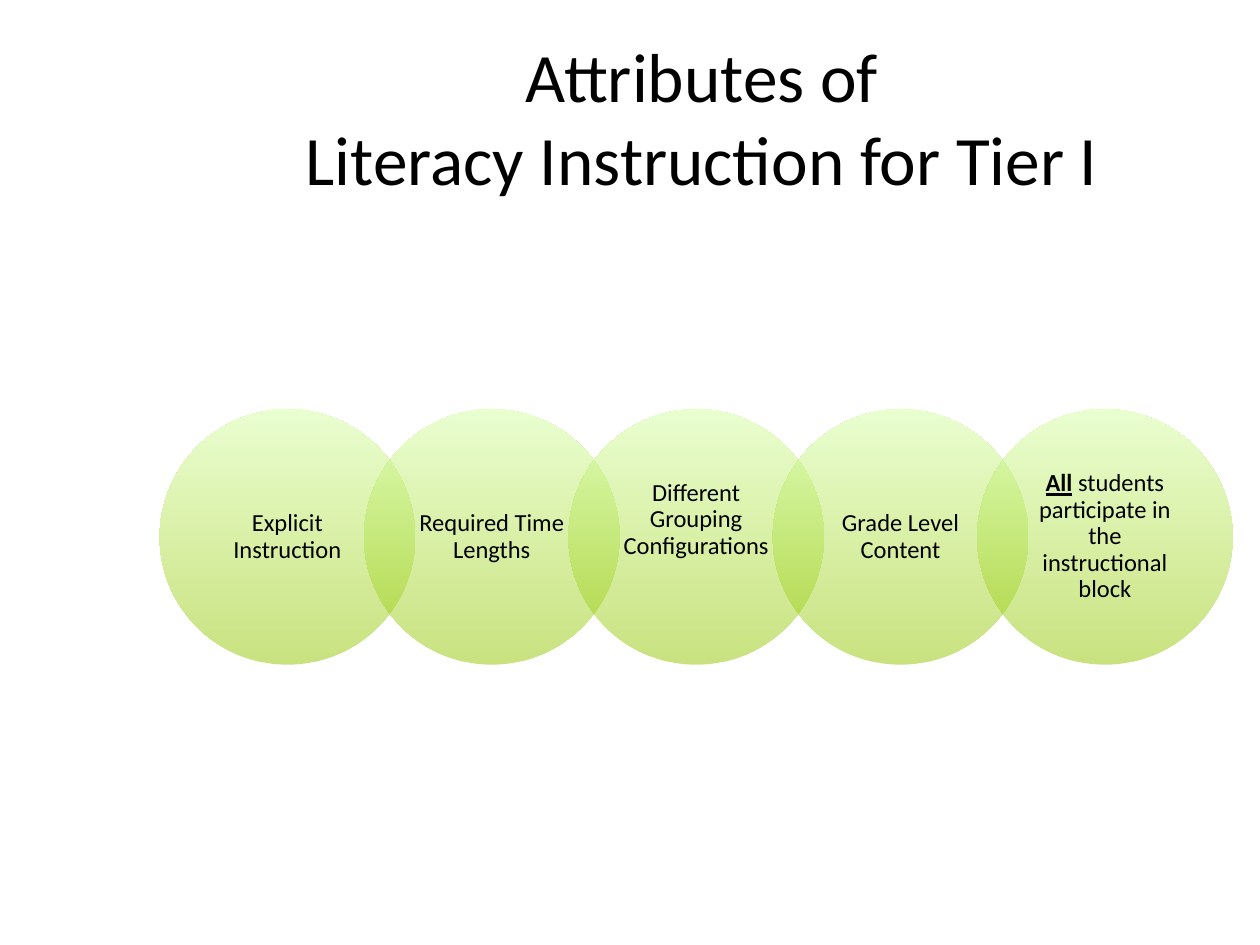
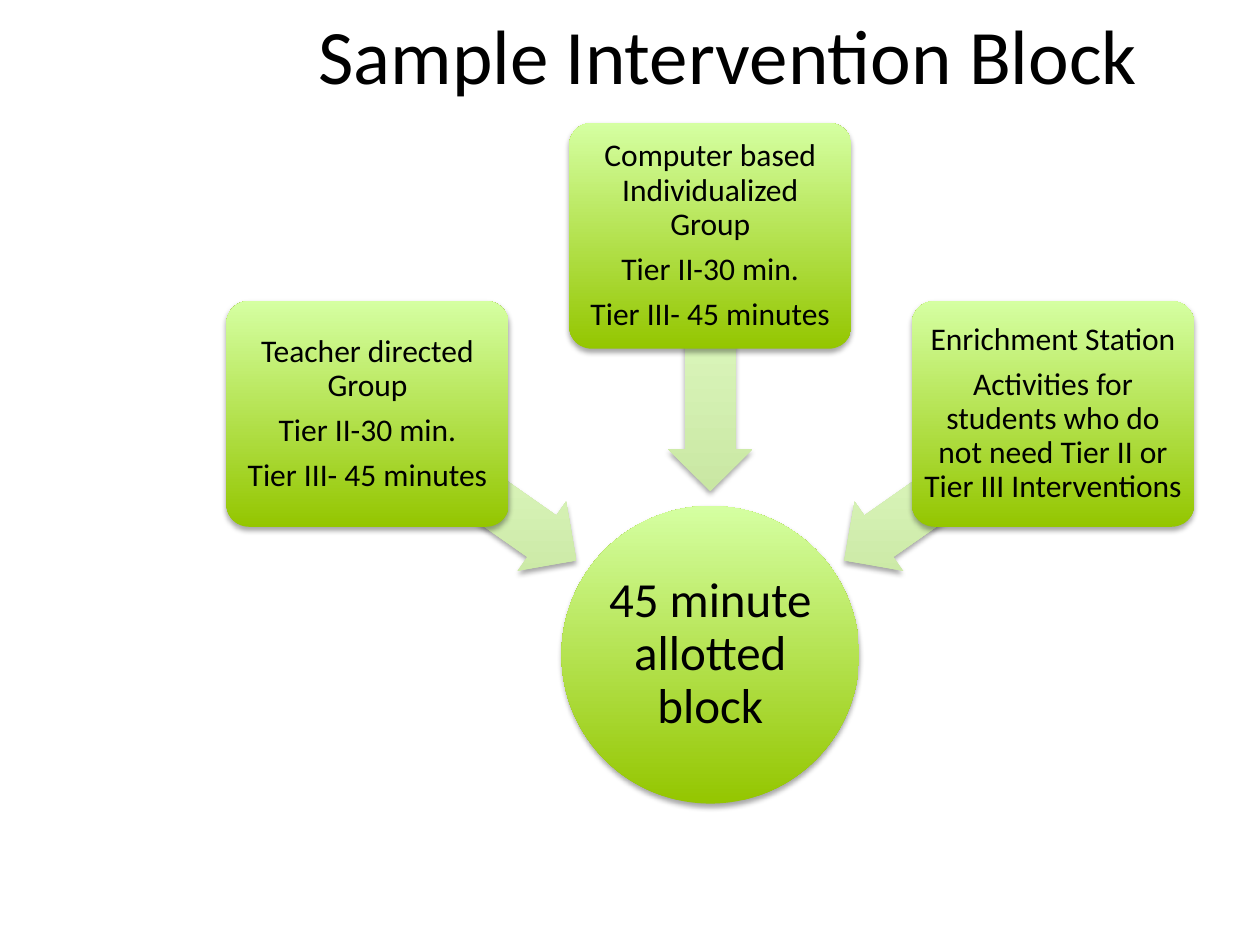
from lxml.etree import SubElement
from pptx import Presentation
from pptx.dml.color import RGBColor
from pptx.enum.shapes import MSO_SHAPE
from pptx.enum.text import MSO_ANCHOR, MSO_AUTO_SIZE, PP_ALIGN
from pptx.oxml.ns import qn
from pptx.util import Cm, Pt

# Shared look
COLORS = {"text": "000000", "dark": "94C600", "light": "D5FFA2",
          "soft": "C9E7A3", "pale": "E6FFCB", "shade": "000000"}
FONT = "Calibri"


def write(frame, lines, size, lead="", spacing=None, after=0,
          inset=(0.25, 0.13, 0.25, 0.13)):
    """Fill a frame with centred paragraphs; lead starts the first one in bold."""
    frame.word_wrap = True
    frame.auto_size = MSO_AUTO_SIZE.NONE
    frame.vertical_anchor = MSO_ANCHOR.MIDDLE
    (frame.margin_left, frame.margin_top,
     frame.margin_right, frame.margin_bottom) = map(Cm, inset)
    for i, line in enumerate(lines):
        para = frame.paragraphs[0] if i == 0 else frame.add_paragraph()
        para.alignment = PP_ALIGN.CENTER
        para.line_spacing = spacing
        para.space_after = Pt(after * size)
        if lead and i == 0:
            style(para.add_run(), lead, size, strong=True)
        for j, part in enumerate(line.split("\n")):
            if j:
                para.add_line_break()
            style(para.add_run(), part, size)


def style(run, text, size, strong=False):
    run.text = text
    font = run.font
    font.name, font.size = FONT, Pt(size)
    font.bold = font.underline = strong
    font.color.rgb = RGBColor.from_string(COLORS["text"])


def tint(parent, color, alpha):
    node = SubElement(parent, qn("a:srgbClr"), val=COLORS[color])
    if alpha < 100:
        SubElement(node, qn("a:alpha"), val=str(alpha * 1000))


def shade(shape, low, high, alpha):
    """Vertical gradient from the low edge up, whatever the rotation."""
    shape.fill.background()
    props = shape._element.spPr
    none = props.find(qn("a:noFill"))
    grad = SubElement(props, qn("a:gradFill"), rotWithShape="0")
    props.replace(none, grad)
    stops = SubElement(grad, qn("a:gsLst"))
    for pos, color in (("0", low), ("100000", high)):
        tint(SubElement(stops, qn("a:gs"), pos=pos), color, alpha)
    SubElement(grad, qn("a:lin"), ang="16200000", scaled="0")


def draw(slide, kind, left, top, width, height, low="dark", high="light",
         alpha=100, shadow=True, turn=0, adjust=()):
    shape = slide.shapes.add_shape(kind, Cm(left), Cm(top), Cm(width), Cm(height))
    shape.rotation = turn
    for i, value in enumerate(adjust):
        shape.adjustments[i] = value
    shape.line.fill.background()
    shade(shape, low, high, alpha)
    shape.shadow.inherit = False
    if shadow:
        effects = shape._element.spPr.find(qn("a:effectLst"))
        outer = SubElement(effects, qn("a:outerShdw"), blurRad=str(Pt(3.1)),
                           dist=str(Pt(1.8)), dir="5400000", rotWithShape="0")
        tint(outer, "shade", 35)
    return shape


def label(shape, lines, size, **form):
    write(shape.text_frame, lines, size, spacing=0.9, after=0.35, **form)


def start(deck, text, size, left, top, width, height):
    """Add a slide with only a title."""
    slide = deck.slides.add_slide(deck.slide_layouts[5])
    title = slide.shapes.title
    title.left, title.top = Cm(left), Cm(top)
    title.width, title.height = Cm(width), Cm(height)
    write(title.text_frame, [text], size)
    return slide


def traits(deck):
    slide = start(deck, "Attributes of \nLiteracy Instruction for Tier I ",
                  39.6, 3.22, 0.76, 22.18, 3.18)
    # Chain of circles, each overlapping the last by a fifth
    size = 5.15
    items = [("", "Explicit Instruction", 0.05),
             ("", "Required Time Lengths", 0.05),
             ("", "Different Grouping Configurations", 0.75),
             ("", "Grade Level Content", 0.05),
             ("All", " students participate in the instructional block", 0.05)]
    for i, (lead, text, foot) in enumerate(items):
        ring = draw(slide, MSO_SHAPE.OVAL, 3.22 + i * size * 0.8, 8.25,
                    size, size, alpha=50, shadow=False)
        label(ring, [text], 14, lead=lead, inset=(0.28, 0.05, 0.28, foot))


def block(deck):
    slide = start(deck, "Sample Intervention Block", 44, 3.25, 0, 22.86, 2.18)
    mid = 14.32
    # Hub
    hub = draw(slide, MSO_SHAPE.OVAL, mid - 3, 10.2, 6, 6)
    label(hub, ["45 minute allotted block"], 28, inset=(0.05,) * 4)

    # Cards, each over an arrow that points at the hub
    wide, high = 5.69, 4.55
    long, thick = 5.15, 1.7
    times = ["Tier II-30 min.", "Tier III- 45 minutes"]
    cards = [
        (-1, 6.07, 9.82, 215, ["Teacher directed Group"] + times),
        (0, 2.48, 7.33, 270, ["Computer based Individualized Group"] + times),
        (1, 6.07, 9.82, 325, ["Enrichment Station",
                              "Activities for students who do not need "
                              "Tier II or Tier III Interventions"]),
    ]
    for side, top, level, turn, lines in cards:
        draw(slide, MSO_SHAPE.LEFT_ARROW, mid + side * 4.81 - long / 2,
             level - thick / 2, long, thick, "soft", "pale",
             turn=turn, adjust=(0.6, 0.5))
        card = draw(slide, MSO_SHAPE.ROUNDED_RECTANGLE,
                    mid + side * 6.91 - wide / 2, top, wide, high, adjust=(0.1,))
        label(card, lines, 18, inset=(0.1,) * 4)


def main():
    deck = Presentation()
    deck.slide_width, deck.slide_height = Cm(25.4), Cm(19.05)
    traits(deck)
    block(deck)
    deck.save("out.pptx")


if __name__ == "__main__":
    main()
